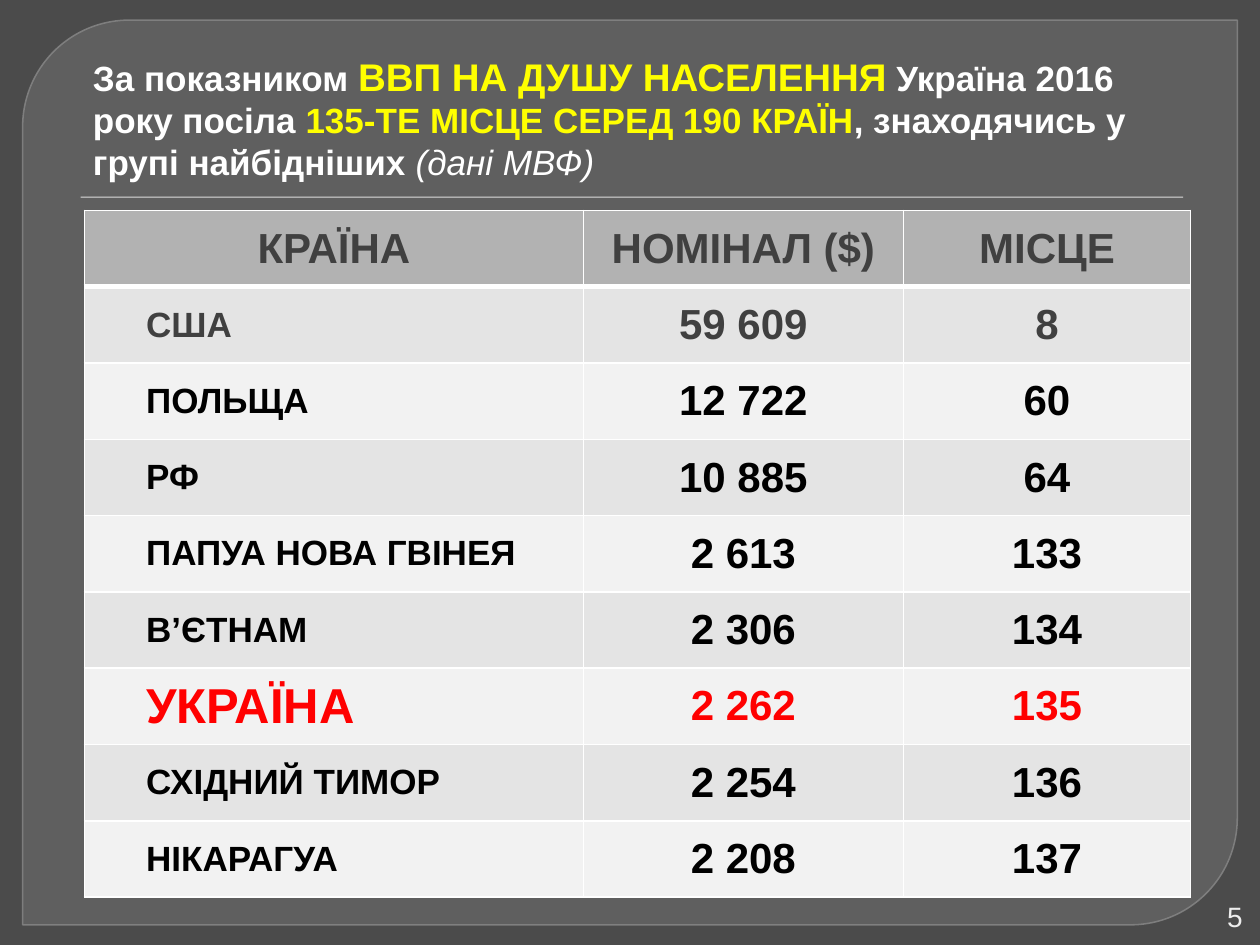
from lxml.etree import SubElement
from pptx import Presentation
from pptx.dml.color import RGBColor
from pptx.enum.shapes import MSO_SHAPE
from pptx.enum.text import MSO_ANCHOR, PP_ALIGN
from pptx.oxml.ns import qn
from pptx.util import Inches, Pt

COLORS = {
    "background": "4B4B4B", "panel": "6B6B6B", "panel_line": "848484",
    "rule": "DDDDDD", "white": "FFFFFF", "yellow": "FFFF00", "number": "EDEDED",
    "header": "B2B2B2", "odd": "E4E4E4", "even": "F2F2F2",
    "gray": "404040", "black": "000000", "red": "FF0000",
}
TITLE = [
    ("За показником ", "white", {}),
    ("ВВП НА ДУШУ НАСЕЛЕННЯ", "yellow", {"size": Pt(22)}),
    (" Україна 2016 року посіла ", "white", {}),
    ("135-ТЕ МІСЦЕ СЕРЕД 190 КРАЇН", "yellow", {}),
    (", знаходячись у групі найбідніших ", "white", {}),
    ("(дані МВФ)", "white", {"bold": False, "italic": True}),
]
PAGE_NUMBER = "5"
HEADER = ("КРАЇНА", "НОМІНАЛ ($)", "МІСЦЕ")
COUNTRIES = [
    ("США", "59 609", "8"),
    ("ПОЛЬЩА", "12 722", "60"),
    ("РФ", "10 885", "64"),
    ("ПАПУА НОВА ГВІНЕЯ", "2 613", "133"),
    ("В’ЄТНАМ", "2 306", "134"),
    ("УКРАЇНА", "2 262", "135"),
    ("СХІДНИЙ ТИМОР", "2 254", "136"),
    ("НІКАРАГУА", "2 208", "137"),
]
ROW_COLORS = {"КРАЇНА": "gray", "США": "gray", "УКРАЇНА": "red"}
NAME_SIZES = {"УКРАЇНА": 28}
COL_WIDTHS = (3.96, 2.54, 2.28)
ROW_HEIGHT = 5.45 / (len(COUNTRIES) + 1)


def rgb(name):
    return RGBColor.from_string(COLORS[name])


def box(*lengths):
    return [Inches(v) for v in lengths]


def add_run(p, text, color, **font):
    r = p.add_run()
    r.text = text
    r.font.color.rgb = rgb(color)
    for key, value in {"name": "Arial", **font}.items():
        setattr(r.font, key, value)


def set_alpha(fill, percent):
    color = fill._xPr.find(qn("a:solidFill"))[0]
    SubElement(color, qn("a:alpha"), val=str(percent * 1000))


def add_filled(s, kind, at, color):
    sp = s.shapes.add_shape(kind, *box(*at))
    sp.shadow.inherit = False
    sp.fill.solid()
    sp.fill.fore_color.rgb = rgb(color)
    sp.line.fill.background()
    return sp


def add_text(s, at, anchor):
    tf = s.shapes.add_textbox(*box(*at)).text_frame
    tf.word_wrap = True
    tf.vertical_anchor = anchor
    return tf.paragraphs[0]


def set_borders(cell, **widths):
    """Draw white cell borders, widths in points by side: L, R, T, B."""
    tcPr = cell._tc.get_or_add_tcPr()
    for side, width in widths.items():
        ln = SubElement(tcPr, qn(f"a:ln{side}"), w=str(Pt(width)))
        fill = SubElement(ln, qn("a:solidFill"))
        SubElement(fill, qn("a:srgbClr"), val=COLORS["white"])


def fill_table(table):
    for col, width in zip(table.columns, COL_WIDTHS):
        col.width = Inches(width)
    for i, values in enumerate([HEADER] + COUNTRIES):
        table.rows[i].height = Inches(ROW_HEIGHT)
        name = values[0]
        band = "header" if i == 0 else "odd" if i % 2 else "even"
        for j, text in enumerate(values):
            cell = table.cell(i, j)
            set_borders(cell, L=1, R=1, T=3 if i == 1 else 1, B=3 if i == 0 else 1)
            cell.fill.solid()
            cell.fill.fore_color.rgb = rgb(band)
            cell.vertical_anchor = MSO_ANCHOR.MIDDLE
            p = cell.text_frame.paragraphs[0]
            size = 24
            if i and j == 0:
                size = NAME_SIZES.get(name, 20)
                p._p.get_or_add_pPr().set("marL", str(Inches(0.39)))
            else:
                p.alignment = PP_ALIGN.CENTER
                p.space_before = Pt(12)
            add_run(p, text, ROW_COLORS.get(name, "black"), size=Pt(size), bold=True)


def main():
    prs = Presentation()
    prs.slide_width, prs.slide_height = box(10, 7.5)
    s = prs.slides.add_slide(prs.slide_layouts[6])
    s.background.fill.solid()
    s.background.fill.fore_color.rgb = rgb("background")

    panel = add_filled(s, MSO_SHAPE.ROUND_2_DIAG_RECTANGLE, (0.18, 0.16, 9.64, 7.18), "panel")
    panel.adjustments[0] = 0.118
    panel.adjustments[1] = 0
    set_alpha(panel.fill, 65)
    panel.line.color.rgb = rgb("panel_line")
    panel.line.width = Pt(0.87)
    set_alpha(panel.line.fill, 88)
    add_filled(s, MSO_SHAPE.RECTANGLE, (0.64, 1.56, 8.75, 0.01), "rule")

    p = add_text(s, (0.58, 0.33, 9, 1.17), MSO_ANCHOR.BOTTOM)
    p._p.get_or_add_pPr().set("marL", str(Inches(0.06)))
    for text, color, font in TITLE:
        add_run(p, text, color, **{"size": Pt(20), "bold": True, **font})

    p = add_text(s, (9.45, 7.12, 0.51, 0.3), MSO_ANCHOR.MIDDLE)
    p.alignment = PP_ALIGN.RIGHT
    add_run(p, PAGE_NUMBER, "number", size=Pt(16))

    frame = s.shapes.add_table(len(COUNTRIES) + 1, len(HEADER), *box(0.67, 1.67, 8.78, 5.45))
    fill_table(frame.table)
    prs.save("out.pptx")


if __name__ == "__main__":
    main()
